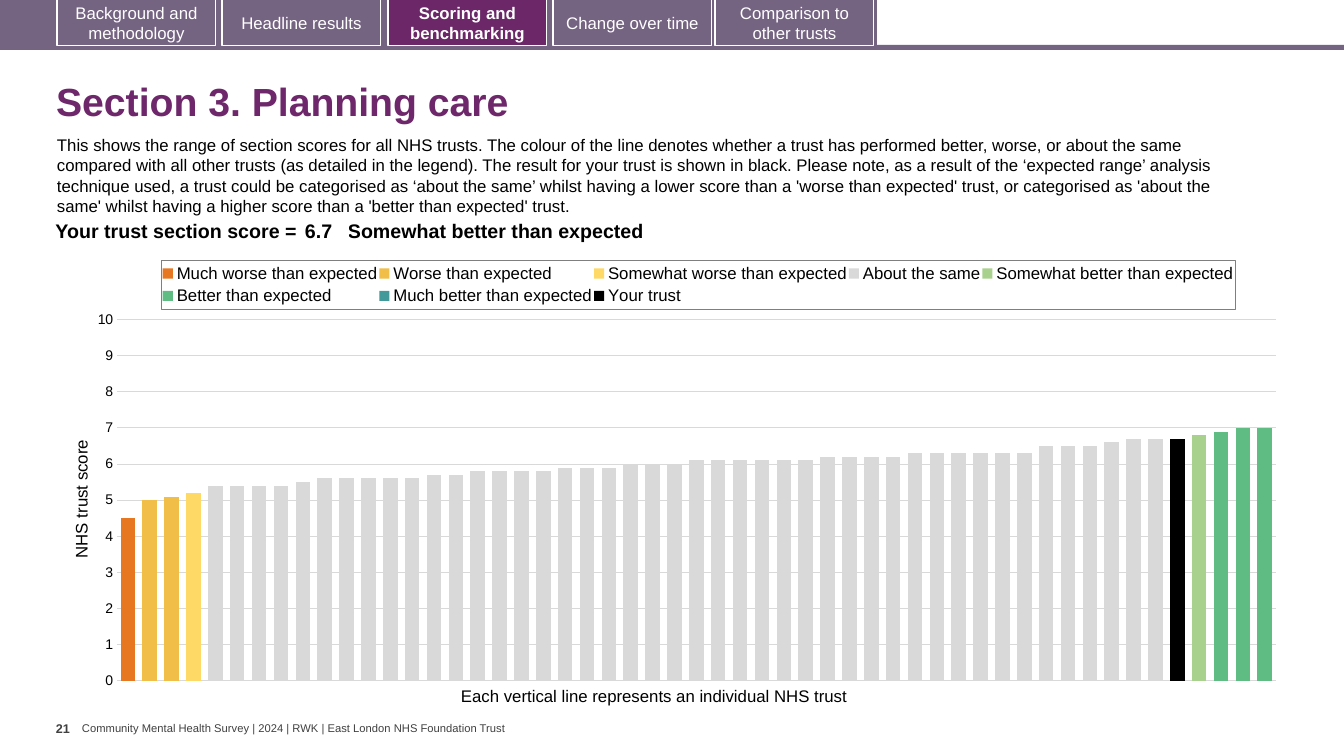
import copy

import pptx
import pptx.chart.data
import pptx.dml.color
import pptx.enum.chart
import pptx.enum.shapes
import pptx.enum.text
import pptx.oxml
import pptx.oxml.ns
import pptx.util

PX = 914400 / 100.8
FONT = "Arial"
COLORS = {
    "bar": "756382", "active": "6B2768", "title": "6D276A", "white": "FFFFFF",
    "black": "000000", "footer": "404040", "grid": "D9D9D9", "frame": "7F7F7F",
    "much_worse": "E87722", "worse": "F1BE48", "somewhat_worse": "FFD966",
    "same": "D9D9D9", "somewhat_better": "A9D18E", "better": "5FBD83", "much_better": "419999",
}
TABS = [(57, "Background and methodology"), (222, "Headline results"),
        (388, "Scoring and benchmarking"), (553, "Change over time"),
        (715, "Comparison to other trusts")]
ACTIVE_TAB = "Scoring and benchmarking"
INTRO = (
    "This shows the range of section scores for all NHS trusts. The colour of the line denotes "
    "whether a trust has performed better, worse, or about the same compared with all other trusts "
    "(as detailed in the legend). The result for your trust is shown in black. Please note, as a "
    "result of the ‘expected range’ analysis technique used, a trust could be categorised as "
    "‘about the same’ whilst having a lower score than a 'worse than expected' trust, or "
    "categorised as 'about the same' whilst having a higher score than a 'better than expected' trust."
)
TRUST_COUNT = 53
SAME_SCORES = [
    5.4, 5.4, 5.4, 5.4, 5.5, 5.6, 5.6, 5.6, 5.6, 5.6, 5.7, 5.7, 5.8, 5.8, 5.8, 5.8, 5.9, 5.9, 5.9,
    6, 6, 6, 6.1, 6.1, 6.1, 6.1, 6.1, 6.1, 6.2, 6.2, 6.2, 6.2, 6.3, 6.3, 6.3, 6.3, 6.3, 6.3,
    6.5, 6.5, 6.5, 6.6, 6.7, 6.7,
]
# Name, colour, position of the first trust, scores
SERIES = [
    ("Much worse than expected", "much_worse", 0, [4.5]),
    ("Worse than expected", "worse", 1, [5, 5.1]),
    ("Somewhat worse than expected", "somewhat_worse", 3, [5.2]),
    ("About the same", "same", 4, SAME_SCORES),
    ("Somewhat better than expected", "somewhat_better", 48, [6.7, 6.8]),
    ("Better than expected", "better", 50, [6.9, 7, 7]),
    ("Much better than expected", "much_better", 0, []),
    ("Your trust", "black", 48, [6.7]),
]
ALIGN = pptx.enum.text.PP_ALIGN
MIDDLE = pptx.enum.text.MSO_ANCHOR.MIDDLE
qn = pptx.oxml.ns.qn


def px(length):
    return round(length * PX)


def rgb(name):
    return pptx.dml.color.RGBColor.from_string(COLORS[name])


def set_font(font, size, color="black", bold=False, name=FONT):
    font.name, font.size, font.bold = name, pptx.util.Pt(size), bold
    font.color.rgb = rgb(color)


def write_text(frame, text, size=12, color="black", bold=False, align=ALIGN.LEFT, spacing=None):
    paragraph = frame.paragraphs[0]
    paragraph.text = text
    paragraph.alignment = align
    if spacing:
        paragraph.line_spacing = spacing
    set_font(paragraph.font, size, color, bold)


def add_text(slide, box, text, wrap=True, margins=(10, 5), anchor=None, **text_format):
    frame = slide.shapes.add_textbox(*map(px, box)).text_frame
    frame.word_wrap = wrap
    frame.margin_left = frame.margin_right = px(margins[0])
    frame.margin_top = frame.margin_bottom = px(margins[1])
    if anchor is not None:
        frame.vertical_anchor = anchor
    write_text(frame, text, **text_format)


def add_rectangle(slide, box, fill, line=None):
    shape = slide.shapes.add_shape(pptx.enum.shapes.MSO_SHAPE.RECTANGLE, *map(px, box))
    shape.shadow.inherit = False
    shape.fill.solid()
    shape.fill.fore_color.rgb = rgb(fill)
    if line:
        shape.line.color.rgb = rgb(line)
        shape.line.width = pptx.util.Pt(0.75)
    else:
        shape.line.fill.background()
    return shape


def add_navigation(slide, box):
    left, top, width, height = box
    add_rectangle(slide, (left, top + height - 5, width, 5), "bar")
    add_rectangle(slide, (left, top, 877, height - 3), "bar")
    for tab_left, label in TABS:
        active = label == ACTIVE_TAB
        tab = add_rectangle(slide, (left + tab_left, top - 1, 159, height - 3),
                            "active" if active else "bar", "white")
        tab.text_frame.word_wrap = True
        tab.text_frame.vertical_anchor = MIDDLE
        write_text(tab.text_frame, label, color="white", bold=active, align=ALIGN.CENTER)


def place_title(slide, box, text):
    title = slide.shapes.title
    title.left, title.top, title.width, title.height = map(px, box)
    title.text_frame.vertical_anchor = MIDDLE
    write_text(title.text_frame, text, size=28, color="title", bold=True, spacing=0.9)


def add_score_row(slide, box):
    table = slide.shapes.add_table(1, 3, *map(px, box)).table
    table.first_row = table.horz_banding = False
    cells = [("Your trust section score =", 265, 4, ALIGN.RIGHT), ("6.7", 47, 4, ALIGN.LEFT),
             ("Somewhat better than expected", 866, 0, ALIGN.LEFT)]
    for index, (text, width, margin, align) in enumerate(cells):
        table.columns[index].width = px(width)
        cell = table.cell(0, index)
        cell.fill.background()
        cell.margin_left = cell.margin_right = px(margin)
        cell.margin_top = cell.margin_bottom = px(4)
        write_text(cell.text_frame, text, size=14, bold=True, align=align)


def set_layout(element, position, index, **values):
    """Give a chart part a fixed place, as fractions of the chart."""
    for layout in element.findall(qn("c:layout")):
        element.remove(layout)
    values.update(xMode="edge", yMode="edge", **dict(zip("xywh", position)))
    parts = "".join(f'<c:{key} val="{value}"/>' for key, value in values.items())
    element.insert(index, pptx.oxml.parse_xml(
        f'<c:layout {pptx.oxml.ns.nsdecls("c")}><c:manualLayout>{parts}</c:manualLayout></c:layout>'))


def format_legend(chart):
    chart.has_legend = True
    legend = chart.legend
    legend.position = pptx.enum.chart.XL_LEGEND_POSITION.TOP
    legend.include_in_layout = False
    set_font(legend.font, 12)
    set_layout(legend._element, (0.076, 0.025, 0.877, 0.11), 1)
    legend._element.find(qn("c:overlay")).addnext(pptx.oxml.parse_xml(
        f'<c:spPr {pptx.oxml.ns.nsdecls("c", "a")}><a:ln w="9525"><a:solidFill>'
        f'<a:srgbClr val="{COLORS["frame"]}"/></a:solidFill></a:ln></c:spPr>'))


def format_axes(chart):
    chart.category_axis.visible = False
    axis = chart.value_axis
    axis.minimum_scale, axis.maximum_scale, axis.major_unit = 0, 10, 1
    axis.major_tick_mark = pptx.enum.chart.XL_TICK_MARK.NONE
    axis.format.line.fill.background()
    axis.major_gridlines.format.line.color.rgb = rgb("grid")
    axis.major_gridlines.format.line.width = pptx.util.Pt(0.75)
    axis.tick_labels.number_format = "0"
    axis.tick_labels.number_format_is_linked = False
    set_font(axis.tick_labels.font, 10)
    frame = axis.axis_title.text_frame
    write_text(frame, "NHS trust score", align=ALIGN.CENTER)
    frame._txBody.bodyPr.set("rot", "-5400000")
    frame._txBody.bodyPr.set("vert", "horz")
    set_layout(axis.axis_title._element, (0, 0.42), 1)


def move_last_series_to_right_axis(chart):
    area = chart._chartSpace.chart.plotArea
    main_bars = area.find(qn("c:barChart"))
    right_bars = copy.deepcopy(main_bars)
    main_bars.remove(main_bars.findall(qn("c:ser"))[-1])
    for series in right_bars.findall(qn("c:ser"))[:-1]:
        right_bars.remove(series)
    main_bars.addnext(right_bars)
    category_id, value_id = "50010", "50020"
    for axis_id, number in zip(right_bars.findall(qn("c:axId")), (category_id, value_id)):
        axis_id.set("val", number)
    last = area.findall(qn("c:valAx"))[-1]
    for kind, own, other, hidden, side, extra in (
            ("catAx", category_id, value_id, 1, "b", ""),
            ("valAx", value_id, category_id, 0, "r", '<c:max val="10"/><c:min val="0"/>')):
        axis = pptx.oxml.parse_xml(
            f'<c:{kind} {pptx.oxml.ns.nsdecls("c", "a")}><c:axId val="{own}"/>'
            f'<c:scaling><c:orientation val="minMax"/>{extra}</c:scaling>'
            f'<c:delete val="{hidden}"/><c:axPos val="{side}"/><c:majorTickMark val="out"/>'
            '<c:minorTickMark val="none"/><c:tickLblPos val="none"/>'
            '<c:spPr><a:ln><a:noFill/></a:ln></c:spPr>'
            f'<c:crossAx val="{other}"/>'
            f'<c:crosses val="{"max" if side == "r" else "autoZero"}"/></c:{kind}>')
        last.addnext(axis)
        last = axis


def add_score_chart(slide, box):
    data = pptx.chart.data.CategoryChartData(number_format="0.0")
    data.categories = [str(number + 1) for number in range(TRUST_COUNT)]
    for name, _, start, scores in SERIES:
        after = TRUST_COUNT - start - len(scores)
        data.add_series(name, [None] * start + scores + [None] * after)
    chart = slide.shapes.add_chart(
        pptx.enum.chart.XL_CHART_TYPE.COLUMN_CLUSTERED, *map(px, box), data).chart
    chart.has_title = False
    set_font(chart.font, 10, name="Calibri")
    plot = chart.plots[0]
    plot.gap_width, plot.overlap, plot.vary_by_categories = 50, 100, False
    for series, (_, color, _, _) in zip(plot.series, SERIES):
        series.invert_if_negative = False
        series.format.fill.solid()
        series.format.fill.fore_color.rgb = rgb(color)
    format_legend(chart)
    format_axes(chart)
    move_last_series_to_right_axis(chart)
    set_layout(chart._chartSpace.chart.plotArea, (0.04, 0.158, 0.946, 0.808), 0,
               layoutTarget="inner")


def add_footer(slide, box):
    left, top, _, height = box
    add_text(slide, (left, top, 25, height), "21", wrap=False, margins=(0, 5),
             size=9, color="footer", bold=True)
    add_text(slide, (left + 26, top + 6, 429, 13),
             "Community Mental Health Survey | 2024 | RWK | East London NHS Foundation Trust",
             wrap=False, margins=(0, 0), anchor=MIDDLE, size=8, color="footer")


def main():
    presentation = pptx.Presentation()
    presentation.slide_width, presentation.slide_height = px(1344), px(756)
    slide = presentation.slides.add_slide(presentation.slide_layouts[5])
    add_navigation(slide, (0, 0, 1344, 50))
    place_title(slide, (46, 67, 1259, 73), "Section 3. Planning care")
    add_text(slide, (47, 130, 1223, 92), INTRO)
    add_score_row(slide, (36, 217, 1178, 31))
    add_score_chart(slide, (68, 249, 1225, 447))
    add_text(slide, (451, 681, 414, 30),
             "Each vertical line represents an individual NHS trust", wrap=False)
    add_footer(slide, (56, 716, 455, 40))
    presentation.save("out.pptx")


if __name__ == "__main__":
    main()
